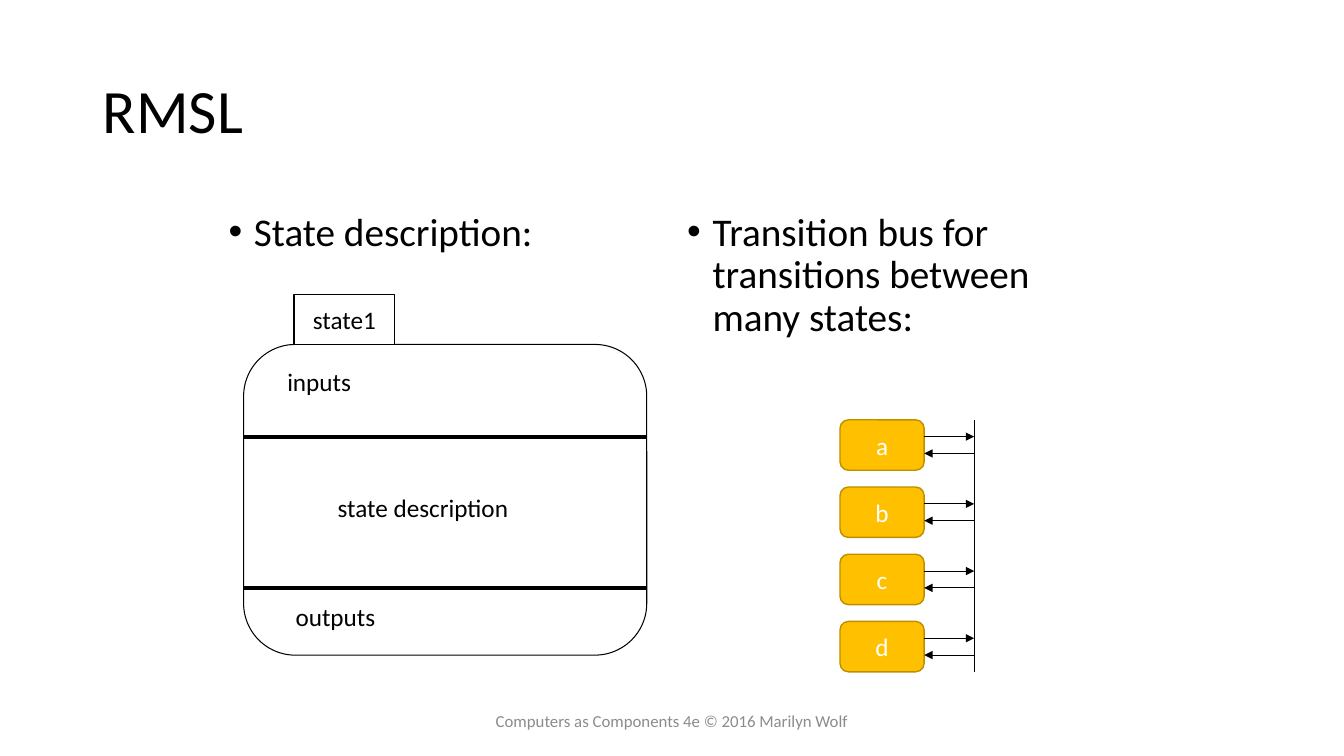
from dataclasses import dataclass

from lxml.etree import SubElement
from pptx import Presentation
from pptx.dml.color import RGBColor
from pptx.enum.shapes import MSO_CONNECTOR, MSO_SHAPE
from pptx.enum.text import MSO_ANCHOR, PP_ALIGN
from pptx.oxml.ns import qn
from pptx.shapes.autoshape import Shape
from pptx.slide import Slide
from pptx.util import Cm, Pt

BLACK = RGBColor(0x00, 0x00, 0x00)
WHITE = RGBColor(0xFF, 0xFF, 0xFF)
GOLD = RGBColor(0xFF, 0xC0, 0x00)
DARK_GOLD = RGBColor(0xBD, 0x8E, 0x00)
GRAY = RGBColor(0x8C, 0x8C, 0x8C)
FONT = "Calibri"


@dataclass
class Label:
    text: str
    left: float
    top: float
    width: float
    height: float = 1.02
    size: float = 18
    color: RGBColor = BLACK
    align: PP_ALIGN = PP_ALIGN.LEFT
    anchor: MSO_ANCHOR = MSO_ANCHOR.TOP
    wrap: bool = False
    spacing: float = 1.0
    bullet: bool = False


@dataclass
class Box:
    kind: MSO_SHAPE
    left: float
    top: float
    width: float
    height: float
    text: str = ""
    fill: RGBColor = WHITE
    line: RGBColor = BLACK
    weight: float = 0.75
    color: RGBColor = BLACK


@dataclass
class Line:
    x1: float
    y1: float
    x2: float
    y2: float
    weight: float = 0.75
    arrow: bool = False


def add_run(p, text: str, size: float, color: RGBColor) -> None:
    r = p.add_run()
    r.text = text
    r.font.name = FONT
    r.font.size = Pt(size)
    r.font.color.rgb = color


def draw_label(s: Slide, label: Label) -> None:
    sp = s.shapes.add_textbox(Cm(label.left), Cm(label.top), Cm(label.width), Cm(label.height))
    tf = sp.text_frame
    tf.word_wrap = label.wrap
    tf.vertical_anchor = label.anchor
    p = tf.paragraphs[0]
    p.alignment = label.align
    p.line_spacing = label.spacing
    if label.bullet:
        p.space_before = Pt(10)
        pPr = p._p.get_or_add_pPr()
        pPr.set("marL", str(Cm(0.64)))
        pPr.set("indent", str(-Cm(0.64)))
        SubElement(pPr, qn("a:buFont"), typeface="Arial")
        SubElement(pPr, qn("a:buChar"), char="•")
    add_run(p, label.text, label.size, label.color)


def draw_box(s: Slide, box: Box) -> Shape:
    sp = s.shapes.add_shape(box.kind, Cm(box.left), Cm(box.top), Cm(box.width), Cm(box.height))
    sp.shadow.inherit = False
    sp.fill.solid()
    sp.fill.fore_color.rgb = box.fill
    sp.line.color.rgb = box.line
    sp.line.width = Pt(box.weight)
    if box.text:
        tf = sp.text_frame
        tf.word_wrap = False
        tf.vertical_anchor = MSO_ANCHOR.MIDDLE
        p = tf.paragraphs[0]
        p.alignment = PP_ALIGN.CENTER
        add_run(p, box.text, 18, box.color)
    return sp


def draw_line(s: Slide, line: Line) -> None:
    cxn = s.shapes.add_connector(
        MSO_CONNECTOR.STRAIGHT, Cm(line.x1), Cm(line.y1), Cm(line.x2), Cm(line.y2))
    cxn.line.color.rgb = BLACK
    cxn.line.width = Pt(line.weight)
    if line.arrow:
        SubElement(cxn.line._get_or_add_ln(), qn("a:tailEnd"), type="triangle")
    SubElement(cxn._element.spPr, qn("a:effectLst"))


def draw_state_description(s: Slide) -> None:
    left, width = 6.14, 10.16
    draw_box(s, Box(MSO_SHAPE.ROUNDED_RECTANGLE, left, 8.68, width, 7.83))
    draw_box(s, Box(MSO_SHAPE.RECTANGLE, 7.41, 7.41, 2.54, 1.27, "state1"))
    for y in (11.01, 14.82):
        draw_line(s, Line(left, y, left + width, y, weight=3))
    for label in (
        Label("inputs", 6.99, 9.1, 2.13),
        Label("state description", 8.26, 12.28, 4.85),
        Label("outputs", 7.2, 15.03, 2.54),
    ):
        draw_label(s, label)


def draw_transition_bus(s: Slide) -> None:
    left, top, width, height = 21.17, 10.58, 2.12, 1.27
    right, bus = left + width, 24.55
    gap = height / 3
    states = "abcd"
    for i, name in enumerate(states):
        y = top + i * (height + gap)
        draw_box(s, Box(MSO_SHAPE.ROUNDED_RECTANGLE, left, y, width, height,
                        name, GOLD, DARK_GOLD, 1, WHITE))
        draw_line(s, Line(right, y + gap, bus, y + gap, arrow=True))
        draw_line(s, Line(bus, y + 2 * gap, right, y + 2 * gap, arrow=True))
    bottom = top + len(states) * (height + gap) - gap
    draw_line(s, Line(bus, bottom, bus, top))


def main() -> None:
    prs = Presentation()
    prs.slide_width, prs.slide_height = Cm(33.87), Cm(19.05)
    s = prs.slides.add_slide(prs.slide_layouts[6])
    for label in (
        Label("RMSL", 2.34, 1.02, 29.21, 3.68, 44,
              anchor=MSO_ANCHOR.MIDDLE, wrap=True, spacing=0.9),
        Label("State description:", 5.51, 5.23, 11.15, 1.75, 28,
              wrap=True, spacing=0.9, bullet=True),
        Label("Transition bus for transitions between many states:",
              17.07, 5.23, 11.15, 3.66, 28, wrap=True, spacing=0.9, bullet=True),
        Label("Computers as Components 4e © 2016 Marilyn Wolf", 11.22, 17.65, 11.43,
              size=12, color=GRAY, align=PP_ALIGN.CENTER,
              anchor=MSO_ANCHOR.MIDDLE, wrap=True),
    ):
        draw_label(s, label)
    draw_state_description(s)
    draw_transition_bus(s)
    prs.save("out.pptx")


if __name__ == "__main__":
    main()
